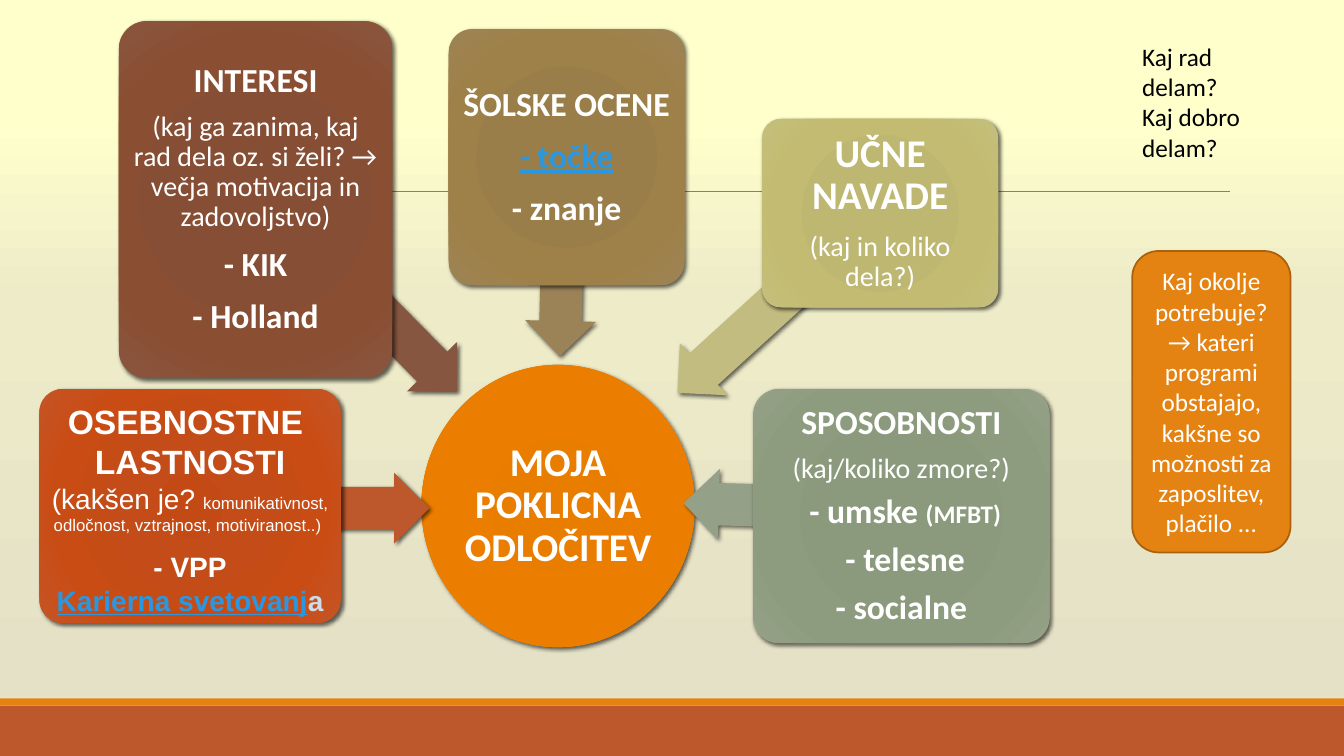
from dataclasses import dataclass

import lxml.etree
import pptx
import pptx.dml.color
import pptx.enum.shapes
import pptx.enum.text
import pptx.oxml.ns
import pptx.util

Inches = pptx.util.Inches
Pt = pptx.util.Pt
Shapes = pptx.enum.shapes.MSO_SHAPE
Align = pptx.enum.text.PP_ALIGN
Anchor = pptx.enum.text.MSO_ANCHOR
qn = pptx.oxml.ns.qn

COLORS: dict[str, str] = {
    "white": "FFFFFF", "black": "000000", "link": "2998E3", "pale": "CCDDEA",
    "rule": "808080", "rust": "BD582C", "orange": "E48312", "orange_edge": "A9610D",
    "brown": "865640", "tan": "9B8357", "olive": "C2BC80", "sage": "94A088",
}
GRADIENTS: dict[str, dict[int, str]] = {
    "page": {16: "FFFFCC", 40: "EDEBC8", 92: "E4E1C6", 93: "EFEEDE", 100: "EDEBD9"},
    "decision": {0: "E57B00", 34: "E87D00", 70: "EB7E00", 100: "EF8407"},
    "rust": {0: "C44A15", 34: "C34C18", 70: "C94C15", 100: "C45525"},
    "brown": {0: "874C32", 34: "864E34", 70: "8A4E33", 100: "8A553D"},
    "tan": {0: "9A7D48", 34: "9A7E4A", 70: "9E8049", 100: "9E8454"},
    "olive": {0: "BEB76E", 34: "BEB771", 70: "C3BB71", 100: "C5BF7D"},
    "sage": {0: "8A987B", 34: "8B997D", 70: "8D9C7E", 100: "94A187"},
}


@dataclass
class Frame:
    left: float
    top: float
    width: float
    height: float
    rotation: float = 0


@dataclass
class Span:
    text: str
    size: float
    bold: bool = True
    color: str = "white"
    underline: bool = False


@dataclass
class Para:
    spans: list[Span]
    spacing: float = 0.9
    gap: float = 0.35


@dataclass
class Factor:
    color: str
    arrow: Frame
    box: Frame
    paras: list[Para]
    inset: float = 0.05
    font: str = "Calibri"
    extra_top: float = 0


FACTORS = [
    Factor("rust", Frame(2.46, 4.69, 1.8, 0.7, 180), Frame(0.39, 3.86, 2.99, 2.32), [
        Para([Span("OSEBNOSTNE ", 24)], 1, 0),
        Para([Span("LASTNOSTI", 24)], 1, 0),
        Para([Span("(kakšen je? ", 20, False),
              Span("komunikativnost, odločnost, vztrajnost, motiviranost..) ", 12, False)], 1, 0.52),
        Para([Span("- VPP", 20)], 1, 0),
        Para([Span("Karierna svetovanj", 20, color="link", underline=True),
              Span("a", 20, color="pale")], 1, 0),
    ], 0.04, "Arial", 0.06),
    Factor("brown", Frame(2.2, 2.56, 2.74, 0.7, 225.4), Frame(1.18, 0.21, 2.71, 3.54), [
        Para([Span("INTERESI", 24)]),
        Para([Span("(kaj ga zanima, kaj rad dela oz. si želi? → "
                   "večja motivacija in zadovoljstvo)", 20, False)]),
        Para([Span("- KIK", 24)], 1),
        Para([Span("- Holland", 24)], 1),
    ]),
    Factor("tan", Frame(4.6, 2.21, 1.95, 0.7, 271.4), Frame(4.45, 0.29, 2.34, 2.54), [
        Para([Span("ŠOLSKE OCENE", 24)]),
        Para([Span("- točke", 24, color="link", underline=True)], 1),
        Para([Span("- znanje", 24)], 1),
    ]),
    Factor("olive", Frame(6.38, 2.67, 2.61, 0.7, 317.7), Frame(7.56, 1.18, 2.34, 1.87), [
        Para([Span("UČNE NAVADE", 28)]),
        Para([Span("(kaj in koliko dela?)", 20, False)]),
    ], 0.06),
    Factor("sage", Frame(6.78, 4.67, 1.94, 0.7, 1.6), Frame(7.47, 3.86, 2.94, 2.52), [
        Para([Span("SPOSOBNOSTI", 24)]),
        Para([Span("(kaj/koliko zmore?)", 20, False)]),
        Para([Span(" - umske ", 24), Span("(MFBT)", 18)]),
        Para([Span(" - telesne", 24)]),
        Para([Span("- socialne", 24)]),
    ]),
]


def rgb(name: str) -> pptx.dml.color.RGBColor:
    return pptx.dml.color.RGBColor.from_string(COLORS[name])


def add_node(parent, tag: str, **attributes):
    return lxml.etree.SubElement(parent, qn(tag), attributes)


def place(frame: Frame) -> tuple:
    return Inches(frame.left), Inches(frame.top), Inches(frame.width), Inches(frame.height)


def set_gradient(fill, owner, name: str, radial: bool = True) -> None:
    fill.gradient()
    gradient = next(owner.iter(qn("a:gradFill")))
    for child in list(gradient):
        gradient.remove(child)
    stops = add_node(gradient, "a:gsLst")
    for position, color in GRADIENTS[name].items():
        stop = add_node(stops, "a:gs", pos=str(position * 1000))
        add_node(stop, "a:srgbClr", val=color)
    if radial:
        circle = add_node(gradient, "a:path", path="circle")
        add_node(circle, "a:fillToRect", **dict.fromkeys("ltrb", "100000"))
    else:
        add_node(gradient, "a:lin", ang="5400000", scaled="0")


def add_block(page, kind, frame: Frame, color: str, radial: bool = False, shadow: bool = False):
    shape = page.shapes.add_shape(kind, *place(frame))
    shape.rotation = frame.rotation
    if radial:
        set_gradient(shape.fill, shape.element.spPr, color)
    else:
        shape.fill.solid()
        shape.fill.fore_color.rgb = rgb(color)
    shape.line.fill.background()
    shape.shadow.inherit = False
    if shadow:
        effects = shape.element.spPr.find(qn("a:effectLst"))
        cast = add_node(effects, "a:outerShdw", blurRad=str(Pt(3)), dist=str(Pt(2)),
                        dir="2700000", algn="ctr", rotWithShape="0")
        add_node(add_node(cast, "a:srgbClr", val=COLORS["black"]), "a:alpha", val="60000")
    return shape


def write(shape, paras: list[Para], font: str = "Calibri", align=Align.CENTER,
          anchor=Anchor.MIDDLE) -> None:
    frame = shape.text_frame
    frame.word_wrap = True
    frame.vertical_anchor = anchor
    for index, item in enumerate(paras):
        para = frame.add_paragraph() if index else frame.paragraphs[0]
        para.alignment = align
        para.line_spacing = item.spacing
        para.space_after = Pt(item.gap * item.spans[0].size)
        for part in item.spans:
            span = para.add_run()
            span.text = part.text
            span.font.name = font
            span.font.size = Pt(part.size)
            span.font.bold = part.bold
            span.font.underline = part.underline
            span.font.color.rgb = rgb(part.color)


def set_insets(shape, inset: float, extra_top: float = 0) -> None:
    frame = shape.text_frame
    frame.margin_left = frame.margin_right = frame.margin_bottom = Inches(inset)
    frame.margin_top = Inches(inset + extra_top)


def add_factor(page, factor: Factor) -> None:
    arrow = add_block(page, Shapes.LEFT_ARROW, factor.arrow, factor.color, shadow=True)
    arrow.adjustments[0] = 0.6
    arrow.adjustments[1] = 0.5
    box = add_block(page, Shapes.ROUNDED_RECTANGLE, factor.box, factor.color, True, True)
    box.adjustments[0] = 0.1
    set_insets(box, factor.inset, factor.extra_top)
    write(box, factor.paras, factor.font)


def main() -> None:
    deck = pptx.Presentation()
    deck.slide_width, deck.slide_height = Inches(13.33), Inches(7.5)
    page = deck.slides.add_slide(deck.slide_layouts[6])
    set_gradient(page.background.fill, page.element, "page", radial=False)

    rule = page.shapes.add_connector(pptx.enum.shapes.MSO_CONNECTOR.STRAIGHT,
                                     Inches(1.3), Inches(1.9), Inches(12.2), Inches(1.9))
    rule.line.color.rgb = rgb("rule")
    rule.line.width = Pt(0.5)
    add_node(rule.element.spPr, "a:effectLst")
    add_block(page, Shapes.RECTANGLE, Frame(0, 7, 13.33, 0.5), "rust")
    add_block(page, Shapes.RECTANGLE, Frame(0, 6.93, 13.33, 0.07), "orange")

    decision = add_block(page, Shapes.OVAL, Frame(4.18, 3.62, 2.71, 2.8), "decision", True, True)
    set_insets(decision, 0.02)
    write(decision, [Para([Span("MOJA POKLICNA ODLOČITEV", 28)])])
    for factor in FACTORS:
        add_factor(page, factor)

    questions = page.shapes.add_textbox(*place(Frame(11.23, 0.36, 1.42, 1.62)))
    write(questions, [Para([Span(text, 18, False, "black")], 1, 0)
                      for text in ("Kaj rad delam?", "Kaj dobro delam?")],
          align=Align.LEFT, anchor=Anchor.TOP)
    questions.text_frame.auto_size = pptx.enum.text.MSO_AUTO_SIZE.SHAPE_TO_FIT_TEXT

    needs = add_block(page, Shapes.ROUNDED_RECTANGLE, Frame(11.23, 2.49, 1.57, 2.99), "orange")
    needs.line.color.rgb = rgb("orange_edge")
    needs.line.width = Pt(1.25)
    write(needs, [Para([Span("Kaj okolje potrebuje? → kateri programi obstajajo, kakšne so "
                             "možnosti za zaposlitev, plačilo ...", 18, False)], 1, 0)])
    deck.save("out.pptx")


if __name__ == "__main__":
    main()
